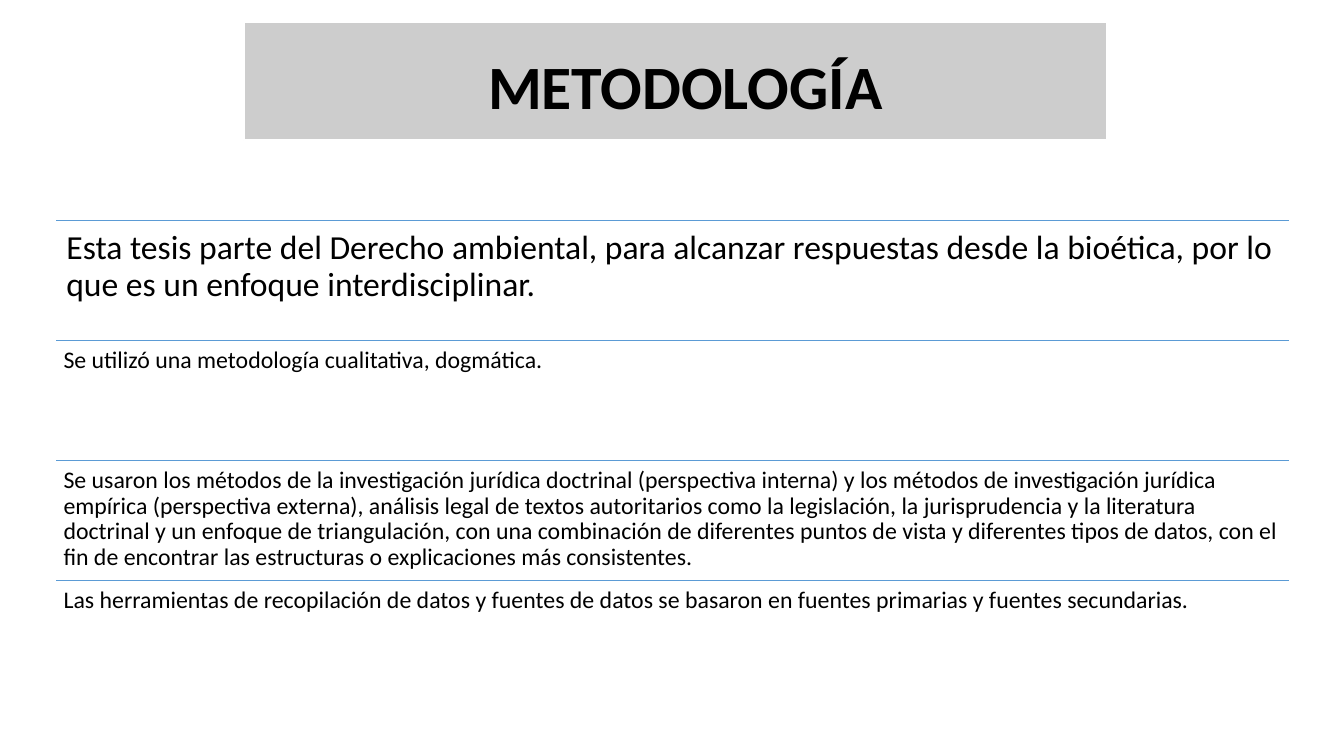
from dataclasses import dataclass

from lxml.etree import SubElement
from pptx import Presentation
from pptx.dml.color import RGBColor
from pptx.enum.shapes import MSO_CONNECTOR, MSO_SHAPE
from pptx.enum.text import MSO_ANCHOR, MSO_AUTO_SIZE, PP_ALIGN
from pptx.oxml.ns import qn
from pptx.util import Inches, Pt

FONT = "Calibri"
BLACK, WHITE, GREY, BLUE = "000000", "FFFFFF", "CDCDCD", "5B9BD5"

# Grid of the method rows, in inches
LEFT, TOP, WIDTH, ROW = 0.56, 2.19, 12.22, 1.19


@dataclass
class MethodRow:
    text: str
    size: int = 17
    inset: float = 0.07


ROWS = [
    MethodRow("Esta tesis parte del Derecho ambiental, para alcanzar respuestas desde "
              "la bioética, por lo que es un enfoque interdisciplinar.", 24, 0.1),
    MethodRow("Se utilizó una metodología cualitativa, dogmática."),
    MethodRow("Se usaron los métodos de la investigación jurídica doctrinal (perspectiva "
              "interna) y los métodos de investigación jurídica empírica (perspectiva "
              "externa), análisis legal de textos autoritarios como la legislación, la "
              "jurisprudencia y la literatura doctrinal y un enfoque de triangulación, con "
              "una combinación de diferentes puntos de vista y diferentes tipos de datos, "
              "con el fin de encontrar las estructuras o explicaciones más consistentes."),
    MethodRow("Las herramientas de recopilación de datos y fuentes de datos se basaron en "
              "fuentes primarias y fuentes secundarias."),
]


def color(value: str) -> RGBColor:
    return RGBColor.from_string(value)


def write(tf, text: str, size: int, align: PP_ALIGN, bold: bool = False) -> None:
    tf.word_wrap = True
    tf.auto_size = MSO_AUTO_SIZE.NONE
    p = tf.paragraphs[0]
    p.alignment = align
    p.line_spacing = 0.9
    r = p.add_run()
    r.text = text
    r.font.name, r.font.size, r.font.bold = FONT, Pt(size), bold
    r.font.color.rgb = color(BLACK)


def add_title(slide, text: str) -> None:
    # Grey band behind the title
    band = slide.shapes.add_shape(MSO_SHAPE.RECTANGLE, Inches(2.42), Inches(0.22),
                                  Inches(8.56), Inches(1.17))
    band.shadow.inherit = False
    band.fill.solid()
    band.fill.fore_color.rgb = color(GREY)
    band.line.color.rgb = color(WHITE)
    band.line.width = Pt(1)

    # Title placeholder, brought in front of the band
    title = slide.shapes.title
    band._element.addnext(title._element)
    title.left, title.top = Inches(0.92), Inches(0.4)
    title.width, title.height = Inches(11.5), Inches(0.98)
    tf = title.text_frame
    tf.vertical_anchor = MSO_ANCHOR.MIDDLE
    tf.margin_left = Inches(0.36)
    write(tf, text, 44, PP_ALIGN.CENTER, bold=True)


def add_row(slide, row: MethodRow, top: float) -> None:
    # Divider
    line = slide.shapes.add_connector(MSO_CONNECTOR.STRAIGHT, Inches(LEFT), Inches(top),
                                      Inches(LEFT + WIDTH), Inches(top))
    line.line.color.rgb = color(BLUE)
    line.line.width = Pt(1)
    SubElement(line._element.spPr, qn("a:effectLst"))

    # Text below the divider
    sp = slide.shapes.add_textbox(Inches(LEFT), Inches(top), Inches(WIDTH), Inches(ROW))
    tf = sp.text_frame
    tf.margin_left = tf.margin_right = Inches(row.inset)
    tf.margin_top = tf.margin_bottom = Inches(row.inset)
    write(tf, row.text, row.size, PP_ALIGN.LEFT)


def main() -> None:
    prs = Presentation()
    prs.slide_width, prs.slide_height = Inches(13.33), Inches(7.5)
    slide = prs.slides.add_slide(prs.slide_layouts[5])
    add_title(slide, "METODOLOGÍA")
    for i, row in enumerate(ROWS):
        add_row(slide, row, TOP + i * ROW)
    prs.save("out.pptx")


if __name__ == "__main__":
    main()
